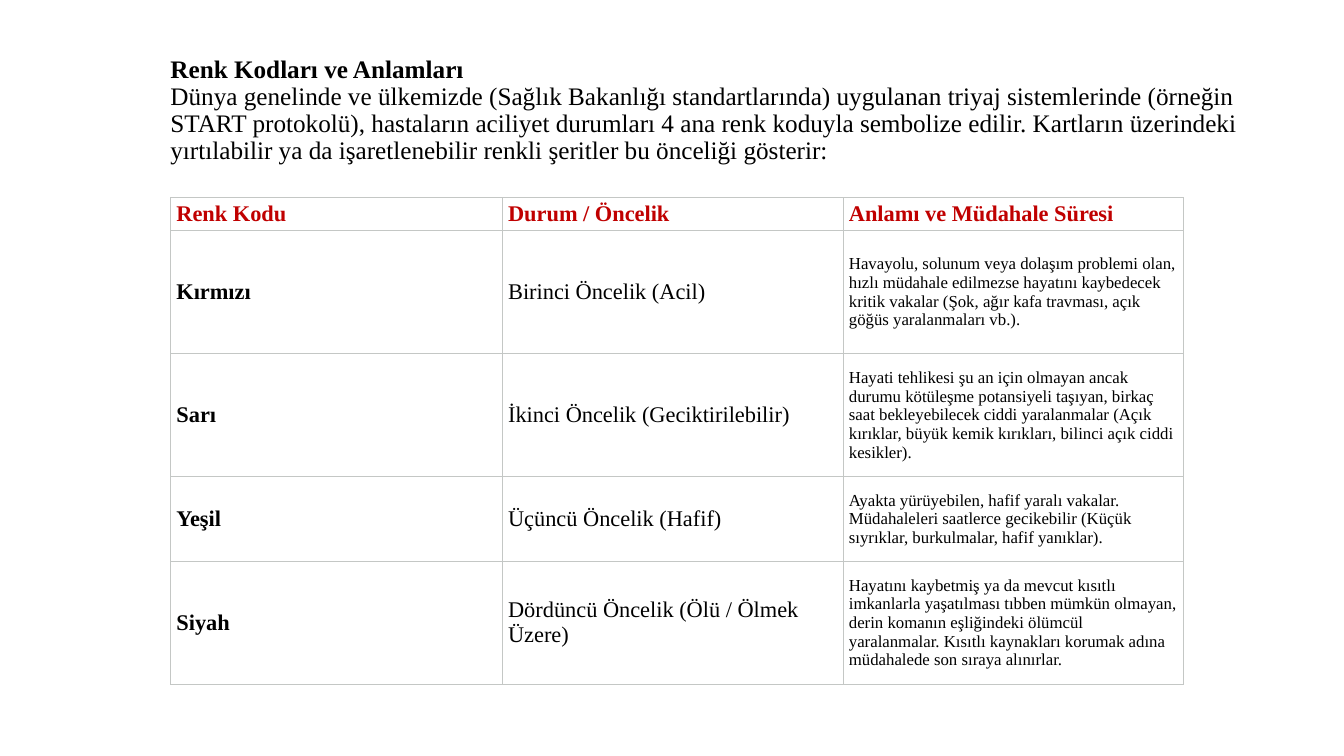
from lxml.etree import SubElement
from pptx import Presentation
from pptx.dml.color import RGBColor
from pptx.enum.text import MSO_ANCHOR as Anchor, MSO_AUTO_SIZE as AutoSize, PP_ALIGN as Align
from pptx.oxml.ns import qn
from pptx.util import Inches, Pt

COLORS = {"text": "000000", "header": "C00000", "border": "C4C7C5"}

HEADING = "Renk Kodları ve Anlamları"
INTRO = (
    "Dünya genelinde ve ülkemizde (Sağlık Bakanlığı standartlarında) uygulanan triyaj "
    "sistemlerinde (örneğin START protokolü), hastaların aciliyet durumları 4 ana renk "
    "koduyla sembolize edilir. Kartların üzerindeki yırtılabilir ya da işaretlenebilir "
    "renkli şeritler bu önceliği gösterir:"
)
HEADERS = ["Renk Kodu", "Durum / Öncelik", "Anlamı ve Müdahale Süresi"]
TRIAGE_ROWS = [
    ["Kırmızı", "Birinci Öncelik (Acil)",
     "Havayolu, solunum veya dolaşım problemi olan, hızlı müdahale edilmezse hayatını "
     "kaybedecek kritik vakalar (Şok, ağır kafa travması, açık göğüs yaralanmaları vb.)."],
    ["Sarı", "İkinci Öncelik (Geciktirilebilir)",
     "Hayati tehlikesi şu an için olmayan ancak durumu kötüleşme potansiyeli taşıyan, "
     "birkaç saat bekleyebilecek ciddi yaralanmalar (Açık kırıklar, büyük kemik "
     "kırıkları, bilinci açık ciddi kesikler)."],
    ["Yeşil", "Üçüncü Öncelik (Hafif)",
     "Ayakta yürüyebilen, hafif yaralı vakalar. Müdahaleleri saatlerce gecikebilir "
     "(Küçük sıyrıklar, burkulmalar, hafif yanıklar)."],
    ["Siyah", "Dördüncü Öncelik (Ölü / Ölmek Üzere)",
     "Hayatını kaybetmiş ya da mevcut kısıtlı imkanlarla yaşatılması tıbben mümkün "
     "olmayan, derin komanın eşliğindeki ölümcül yaralanmalar. Kısıtlı kaynakları "
     "korumak adına müdahalede son sıraya alınırlar."],
]
COLUMN_WIDTHS = [3.29, 3.38, 3.38]
ROW_HEIGHTS = [0.33, 1.22, 1.22, 0.84, 1.22]


class SlideBuilder:
    font_name = "Times New Roman"

    def __init__(self, presentation):
        self.slide = presentation.slides.add_slide(presentation.slide_layouts[5])

    def add_run(self, paragraph, text, size, bold=False, color="text"):
        run = paragraph.add_run()
        run.text = text
        run.font.name = self.font_name
        run.font.size = Pt(size)
        run.font.bold = bold
        run.font.color.rgb = RGBColor.from_string(COLORS[color])

    def add_title(self, heading, intro, left, top, width, height):
        title = self.slide.shapes.title
        title.left, title.top = Inches(left), Inches(top)
        title.width, title.height = Inches(width), Inches(height)
        frame = title.text_frame
        frame.word_wrap = True
        frame.auto_size = AutoSize.NONE
        frame.vertical_anchor = Anchor.MIDDLE
        frame.margin_bottom = Inches(0.32)
        paragraph = frame.paragraphs[0]
        paragraph.alignment = Align.LEFT
        paragraph.line_spacing = 0.9
        self.add_run(paragraph, heading, 18, bold=True)
        paragraph.add_line_break()
        self.add_run(paragraph, intro, 18)

    def add_borders(self, cell):
        properties = cell._tc.get_or_add_tcPr()
        for side in ("a:lnL", "a:lnR", "a:lnT", "a:lnB"):
            line = SubElement(properties, qn(side), w=str(Pt(0.6)))
            fill = SubElement(line, qn("a:solidFill"))
            SubElement(fill, qn("a:srgbClr"), val=COLORS["border"])

    def add_cell(self, cell, text, **style):
        cell.margin_left = cell.margin_right = Inches(0.06)
        cell.margin_top = cell.margin_bottom = Inches(0.04)
        cell.vertical_anchor = Anchor.MIDDLE
        self.add_borders(cell)
        cell.fill.background()
        self.add_run(cell.text_frame.paragraphs[0], text, **style)

    def add_table(self, rows, left, top, widths, heights):
        table = self.slide.shapes.add_table(
            len(rows), len(widths), Inches(left), Inches(top),
            Inches(sum(widths)), Inches(sum(heights))).table
        table.first_row = table.horz_banding = False
        for column, width in zip(table.columns, widths):
            column.width = Inches(width)
        for row, height in zip(table.rows, heights):
            row.height = Inches(height)
        for row_index, texts in enumerate(rows):
            is_header = row_index == 0
            for column_index, text in enumerate(texts):
                self.add_cell(
                    table.cell(row_index, column_index), text,
                    size=16 if is_header or column_index < 2 else 12,
                    bold=is_header or column_index == 0,
                    color="header" if is_header else "text")


def main():
    presentation = Presentation()
    presentation.slide_width = Inches(13.33)
    presentation.slide_height = Inches(7.5)
    builder = SlideBuilder(presentation)
    builder.add_title(HEADING, INTRO, 1.59, 0.51, 11.12, 1.45)
    builder.add_table([HEADERS, *TRIAGE_ROWS], 1.69, 1.96, COLUMN_WIDTHS, ROW_HEIGHTS)
    presentation.save("out.pptx")


if __name__ == "__main__":
    main()
